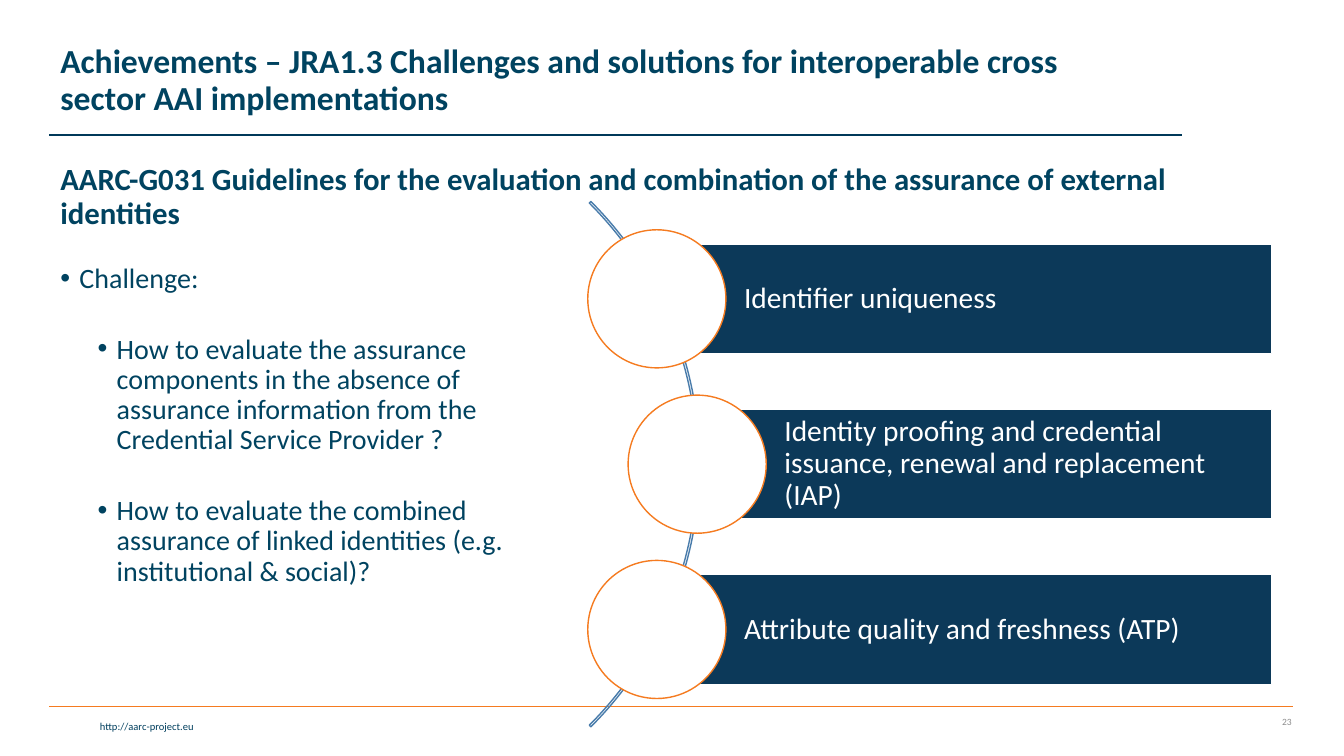
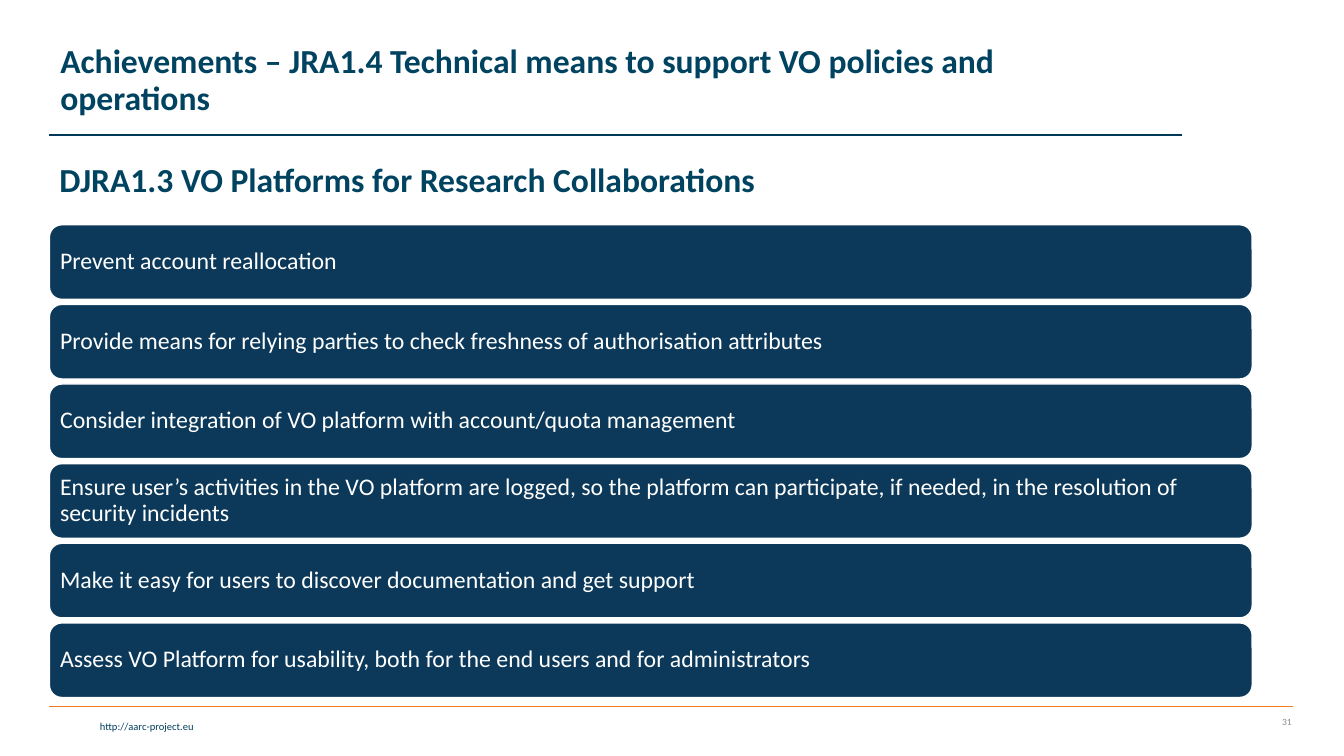
from lxml.etree import SubElement
from pptx import Presentation
from pptx.dml.color import RGBColor
from pptx.enum.shapes import MSO_CONNECTOR, MSO_SHAPE
from pptx.enum.text import MSO_ANCHOR, PP_ALIGN
from pptx.oxml.ns import qn
from pptx.util import Inches, Pt

FONT = "Calibri"
NAVY = "0C3959"
RULE_NAVY = "003959"
TEXT_BLUE = "004360"
FOOTER_BLUE = "003F5E"
ORANGE = "F57B20"
ARC_BLUE = "497CAB"
GREY = "8C8C8C"
WHITE = "FFFFFF"
DEFAULT_INSETS = (0.1, 0.05, 0.1, 0.05)

ASSURANCE_TOPICS = [
    ("Identifier uniqueness", 6.51),
    ("Identity proofing and credential issuance, renewal and replacement (IAP)", 6.91),
    ("Attribute quality and freshness (ATP)", 6.51),
]
CHALLENGES = [
    ("Challenge:", 0.19),
    ("How to evaluate the assurance components in the absence of assurance "
     "information from the Credential Service Provider ?", 0.56),
    ("How to evaluate the combined assurance of linked identities "
     "(e.g. institutional & social)?", 0.56),
]
RECOMMENDATIONS = [
    "Prevent account reallocation",
    "Provide means for relying parties to check freshness of authorisation attributes",
    "Consider integration of VO platform with account/quota management",
    "Ensure user’s activities in the VO platform are logged, so the platform can "
    "participate, if needed, in the resolution of security incidents",
    "Make it easy for users to discover documentation and get support",
    "Assess VO Platform for usability, both for the end users and for administrators",
]


def color(value):
    """Turn a hex string into a colour."""
    return RGBColor.from_string(value)


def set_frame(shape, anchor, insets=DEFAULT_INSETS):
    """Prepare the text frame of a shape and return it."""
    frame = shape.text_frame
    frame.word_wrap = True
    frame.vertical_anchor = anchor
    left, top, right, bottom = map(Inches, insets)
    frame.margin_left, frame.margin_top = left, top
    frame.margin_right, frame.margin_bottom = right, bottom
    return frame


def write(paragraph, text, size, text_color, bold=False, align=PP_ALIGN.LEFT, spacing=0.9):
    """Add one formatted run to a paragraph."""
    paragraph.alignment = align
    paragraph.line_spacing = spacing
    run = paragraph.add_run()
    run.text = text
    run.font.name = FONT
    run.font.size = Pt(size)
    run.font.bold = bold
    run.font.color.rgb = color(text_color)


def add_text(slide, box, text, size, text_color, anchor=MSO_ANCHOR.TOP, **style):
    """Add a text box with a single paragraph."""
    shape = slide.shapes.add_textbox(*map(Inches, box))
    write(set_frame(shape, anchor).paragraphs[0], text, size, text_color, **style)


def add_shape(slide, preset, box, line, fill=None):
    """Add a flat preset shape."""
    shape = slide.shapes.add_shape(preset, *map(Inches, box))
    shape.shadow.inherit = False
    if fill:
        shape.fill.solid()
        shape.fill.fore_color.rgb = color(fill)
    else:
        shape.fill.background()
    shape.line.color.rgb = color(line)
    shape.line.width = Pt(1)
    return shape


def add_bar(slide, preset, box, text, size, insets):
    """Add a navy bar with its label."""
    bar = add_shape(slide, preset, box, WHITE, NAVY)
    frame = set_frame(bar, MSO_ANCHOR.MIDDLE, insets)
    write(frame.paragraphs[0], text, size, WHITE)


def add_rule(slide, left, right, top, line):
    """Add a thin horizontal line."""
    rule = slide.shapes.add_connector(
        MSO_CONNECTOR.STRAIGHT, Inches(left), Inches(top), Inches(right), Inches(top))
    rule.line.color.rgb = color(line)
    rule.line.width = Pt(1)
    SubElement(rule._element.spPr, qn("a:effectLst"))


def add_bullets(slide, box, items, size, gap):
    """Add a bulleted list of text and indent pairs."""
    shape = slide.shapes.add_textbox(*map(Inches, box))
    frame = set_frame(shape, MSO_ANCHOR.TOP)
    for index, (text, indent) in enumerate(items):
        paragraph = frame.add_paragraph() if index else frame.paragraphs[0]
        properties = paragraph._p.get_or_add_pPr()
        properties.set("marL", str(Inches(indent)))
        properties.set("indent", str(Inches(-0.19)))
        SubElement(properties, qn("a:buFont"), typeface="Arial")
        SubElement(properties, qn("a:buChar"), char="•")
        if index:
            paragraph.space_before = Pt(gap)
        write(paragraph, text, size, TEXT_BLUE)


def add_base_slide(presentation, title, number):
    """Add a slide with the shared title, rules and footer."""
    slide = presentation.slides.add_slide(presentation.slide_layouts[6])
    add_rule(slide, 0.49, 12.82, 7.01, ORANGE)
    add_rule(slide, 0.49, 11.72, 1.34, RULE_NAVY)
    add_text(slide, (0.03, 7.09, 1.99, 0.23), "http://aarc-project.eu", 7.5, FOOTER_BLUE,
             align=PP_ALIGN.RIGHT, spacing=1.0)
    add_text(slide, (12.1, 7.01, 0.81, 0.3), number, 6.8, GREY,
             anchor=MSO_ANCHOR.MIDDLE, align=PP_ALIGN.RIGHT, spacing=1.0)
    add_text(slide, (0.5, 0.08, 10.51, 1.45), title, 24, TEXT_BLUE,
             anchor=MSO_ANCHOR.MIDDLE, bold=True)
    return slide


def add_topic_arc(slide, topics):
    """Add labelled bars with circles strung along an arc."""
    arc = add_shape(slide, MSO_SHAPE.BLOCK_ARC, (-0.43, 0.92, 7.37, 7.37), ARC_BLUE)
    for index, adjustment in enumerate((189, 27, 0.003)):
        arc.adjustments[index] = adjustment
    right, height, diameter = 12.61, 1.09, 1.37
    for index, (text, left) in enumerate(topics):
        top = 2.42 + 1.64 * index
        add_bar(slide, MSO_SHAPE.RECTANGLE, (left, top, right - left, height),
                text, 21, (0.87, 0.06, 0.06, 0.06))
        circle_top = top + (height - diameter) / 2
        add_shape(slide, MSO_SHAPE.OVAL, (left - 0.68, circle_top, diameter, diameter),
                  ORANGE, WHITE)


def build_assurance_slide(presentation):
    """Build the slide on assurance of external identities."""
    slide = add_base_slide(
        presentation,
        "Achievements – JRA1.3 Challenges and solutions for interoperable cross "
        "sector AAI implementations", "23")
    add_text(slide, (0.5, 1.58, 11.79, 0.8),
             "AARC-G031 Guidelines for the evaluation and combination of the assurance "
             "of external identities", 22, TEXT_BLUE, bold=True)
    add_topic_arc(slide, ASSURANCE_TOPICS)
    add_bullets(slide, (0.5, 2.57, 5.26, 4), CHALLENGES, 20, 29)


def build_platform_slide(presentation):
    """Build the slide on platforms for research collaborations."""
    slide = add_base_slide(
        presentation,
        "Achievements – JRA1.4 Technical means to support VO policies and operations", "31")
    add_text(slide, (0.49, 1.57, 11.93, 0.57),
             "DJRA1.3 VO Platforms for Research Collaborations", 24, TEXT_BLUE, bold=True)
    for index, text in enumerate(RECOMMENDATIONS):
        add_bar(slide, MSO_SHAPE.ROUNDED_RECTANGLE, (0.49, 2.23 + 0.79 * index, 11.93, 0.74),
                text, 17, (0.07,) * 4)


def main():
    """Build and save the presentation."""
    presentation = Presentation()
    presentation.slide_width = Inches(13.33)
    presentation.slide_height = Inches(7.5)
    build_assurance_slide(presentation)
    build_platform_slide(presentation)
    presentation.save("out.pptx")


if __name__ == "__main__":
    main()
